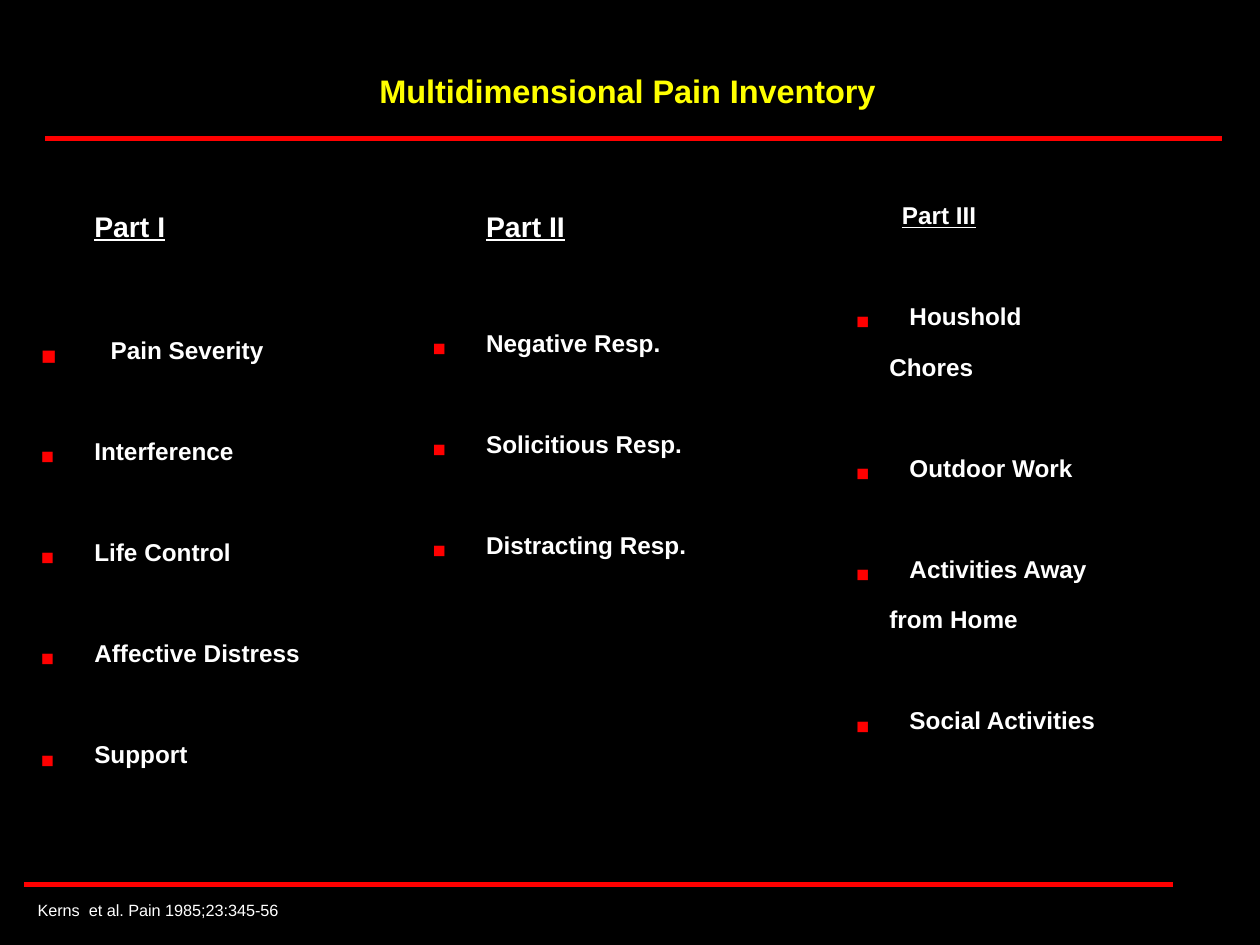
from lxml import etree
from pptx import Presentation
from pptx.dml.color import RGBColor
from pptx.enum.shapes import MSO_CONNECTOR
from pptx.enum.text import MSO_ANCHOR, MSO_AUTO_SIZE, PP_ALIGN
from pptx.oxml.ns import qn
from pptx.util import Inches, Pt

STRAIGHT = MSO_CONNECTOR.STRAIGHT
TOP, NO_FIT = MSO_ANCHOR.TOP, MSO_AUTO_SIZE.NONE
CENTER, LEFT = PP_ALIGN.CENTER, PP_ALIGN.LEFT


def color(hex_string):
    return RGBColor.from_string(hex_string)


def write(p, text, size, hex_color, bold=True, underline=False):
    """Fill a paragraph with one raised Arial run."""
    p.text = text
    r = p.runs[0]
    r.font.name = "Arial"
    r.font.size = Pt(size)
    r.font.bold = bold
    r.font.underline = underline
    r.font.color.rgb = color(hex_color)
    r.font._element.set("baseline", "30000")


prs = Presentation()
prs.slide_width, prs.slide_height = Inches(10), Inches(7.5)
s = prs.slides.add_slide(prs.slide_layouts[5])
s.background.fill.solid()
s.background.fill.fore_color.rgb = color("000000")

# Title
title = s.shapes.title
title.left, title.top = Inches(1.34), Inches(0.46)
title.width, title.height = Inches(7.28), Inches(0.63)
tf = title.text_frame
tf.auto_size, tf.vertical_anchor, tf.word_wrap = NO_FIT, TOP, True
write(tf.paragraphs[0], "Multidimensional Pain Inventory", 32, "FFFF00")
tf.paragraphs[0].alignment = CENTER

# Columns: box, heading (text, size, indent), gap below heading,
# items as (text, indent, bullet size in percent or None for a continuation)
columns = [
    ((0.22, 1.56, 3.51, 4.75), ("Part I", 28, 0.43), 39,
     [("Pain Severity", 0.56, 117), ("Interference", 0.43, 100),
      ("Life Control", 0.43, 100), ("Affective Distress", 0.43, 100),
      ("Support", 0.43, 100)]),
    ((3.33, 1.56, 3.44, 3.06), ("Part II", 28, 0.43), 35,
     [("Negative Resp.", 0.43, 100), ("Solicitious Resp.", 0.43, 100),
      ("Distracting Resp.", 0.43, 100)]),
    ((6.69, 1.5, 3.24, 4.54), ("Part III", 24, 0.37), 29,
     [("Houshold", 0.43, 100), ("Chores", 0.27, None),
      ("Outdoor Work", 0.43, 100), ("Activities Away", 0.43, 100),
      ("from Home", 0.27, None), ("Social Activities", 0.43, 100)]),
]
for box, (heading, size, indent), heading_gap, items in columns:
    tf = s.shapes.add_textbox(*map(Inches, box)).text_frame
    tf.word_wrap = True
    p = tf.paragraphs[0]
    write(p, heading, size, "FFFFFF", underline=True)
    p._p.get_or_add_pPr().set("marL", str(Inches(indent)))

    for i, (text, indent, bullet_size) in enumerate(items):
        p = tf.add_paragraph()
        write(p, text, 24, "FFFFFF")
        pPr = p._p.get_or_add_pPr()
        pPr.set("marL", str(Inches(indent)))
        if bullet_size is None:
            continue
        p.space_before = Pt(heading_gap if i == 0 else 29)
        pPr.set("indent", str(-Inches(indent)))
        bullet_color = etree.SubElement(pPr, qn("a:buClr"))
        etree.SubElement(bullet_color, qn("a:srgbClr"), val="FF0000")
        etree.SubElement(pPr, qn("a:buSzPct"), val=str(bullet_size * 1000))
        etree.SubElement(pPr, qn("a:buFont"), typeface="Arial")
        etree.SubElement(pPr, qn("a:buChar"), char="▪")

# Citation
tf = s.shapes.add_textbox(Inches(0.2), Inches(7.07), Inches(3.88), Inches(0.37)).text_frame
tf.word_wrap = True
write(tf.paragraphs[0], "Kerns  et al. Pain 1985;23:345‑56", 16, "FFFFFF", bold=False)
tf.paragraphs[0].alignment = LEFT

# Red rules
for x1, x2, y in [(0.36, 9.7, 1.1), (0.19, 9.31, 7.02)]:
    rule = s.shapes.add_connector(STRAIGHT, Inches(x1), Inches(y), Inches(x2), Inches(y))
    rule.line.color.rgb = color("FF0000")
    rule.line.width = Pt(3)
    etree.SubElement(rule._element.spPr, qn("a:effectLst"))

prs.save("out.pptx")
